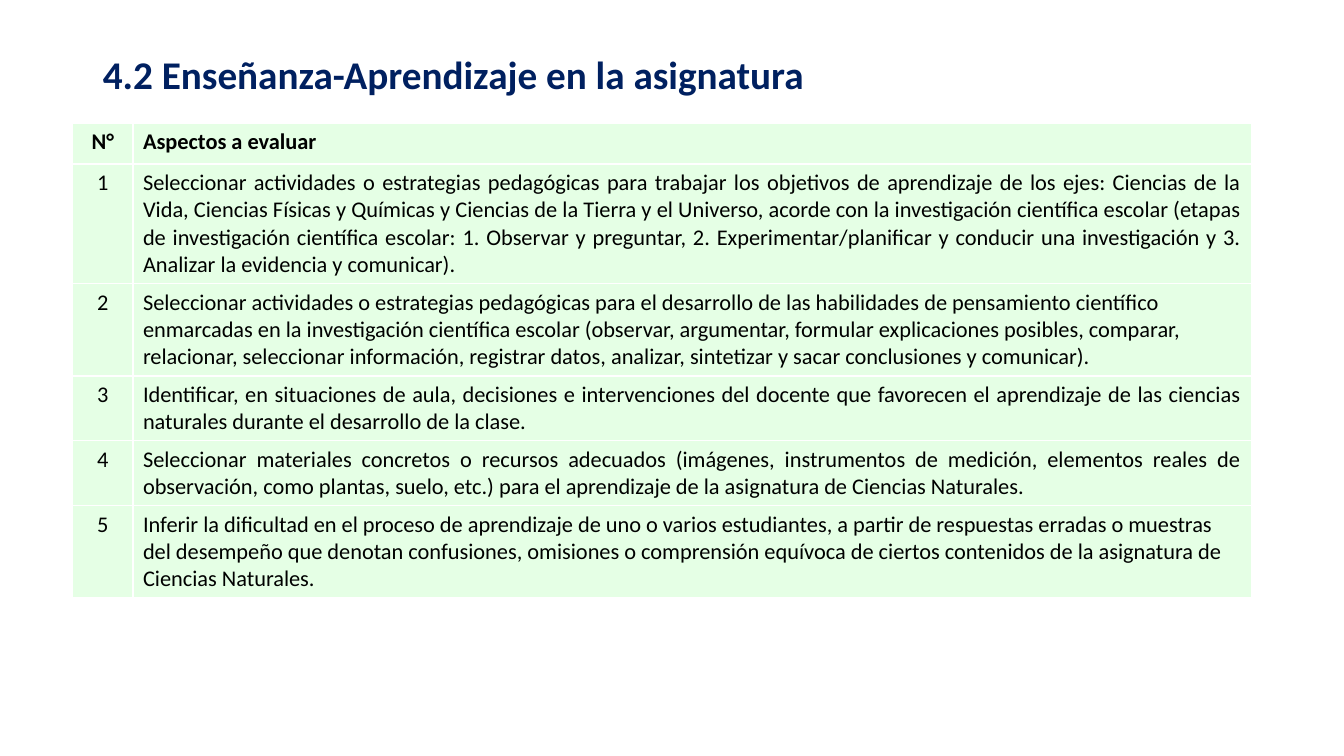
from pptx import Presentation
from pptx.dml.color import RGBColor
from pptx.enum.text import MSO_ANCHOR, PP_ALIGN
from pptx.util import Pt

COLORS = {"heading": "002060", "text": "000000", "cell": "E5FFE5"}
FONT = "Calibri"
LINE_HEIGHT, CELL_PADDING = 19.53, 7.2

# Each aspect: wording, alignment, number of lines
ASPECTS = [
    ("Seleccionar actividades o estrategias pedagógicas para trabajar los objetivos de "
     "aprendizaje de los ejes: Ciencias de la Vida, Ciencias Físicas y Químicas y Ciencias "
     "de la Tierra y el Universo, acorde con la investigación científica escolar (etapas de "
     "investigación científica escolar: 1. Observar y preguntar, 2. Experimentar/planificar "
     "y conducir una investigación y 3. Analizar la evidencia y comunicar).",
     PP_ALIGN.JUSTIFY, 4),
    ("Seleccionar actividades o estrategias pedagógicas para el desarrollo de las "
     "habilidades de pensamiento científico enmarcadas en la investigación científica "
     "escolar (observar, argumentar, formular explicaciones posibles, comparar, relacionar, "
     "seleccionar información, registrar datos, analizar, sintetizar y sacar conclusiones y "
     "comunicar).",
     PP_ALIGN.LEFT, 3),
    ("Identificar, en situaciones de aula, decisiones e intervenciones del docente que "
     "favorecen el aprendizaje de las ciencias naturales durante el desarrollo de la clase.",
     PP_ALIGN.JUSTIFY, 2),
    ("Seleccionar materiales concretos o recursos adecuados (imágenes, instrumentos de "
     "medición, elementos reales de observación, como plantas, suelo, etc.) para el "
     "aprendizaje de la asignatura de Ciencias Naturales.",
     PP_ALIGN.JUSTIFY, 2),
    ("Inferir la dificultad en el proceso de aprendizaje de uno o varios estudiantes, a "
     "partir de respuestas erradas o muestras del desempeño que denotan confusiones, "
     "omisiones o comprensión equívoca de ciertos contenidos de la asignatura de Ciencias "
     "Naturales.",
     PP_ALIGN.LEFT, 3),
]


class SlideBuilder:
    def __init__(self, slide):
        self.slide = slide

    def add_text(self, frame, text, size, color, bold, align):
        paragraph = frame.paragraphs[0]
        paragraph.alignment = align
        run = paragraph.add_run()
        run.text = text
        run.font.name = FONT
        run.font.size = Pt(size)
        run.font.bold = bold
        run.font.color.rgb = RGBColor.from_string(COLORS[color])
        return paragraph

    def title(self, text, left, top, width, height):
        heading = self.slide.shapes.title
        heading.left, heading.top = Pt(left), Pt(top)
        heading.width, heading.height = Pt(width), Pt(height)
        frame = heading.text_frame
        frame.vertical_anchor = MSO_ANCHOR.MIDDLE
        self.add_text(frame, text, 28, "heading", True, PP_ALIGN.LEFT).line_spacing = 0.9

    def table(self, rows, left, top, widths, heights):
        grid = self.slide.shapes.add_table(
            len(rows), len(widths), Pt(left), Pt(top),
            Pt(sum(widths)), Pt(sum(heights))).table
        grid.horz_banding = False
        for column, width in zip(grid.columns, widths):
            column.width = Pt(width)
        for r, (row, height) in enumerate(zip(rows, heights)):
            grid.rows[r].height = Pt(height)
            for c, (text, align) in enumerate(row):
                cell = grid.cell(r, c)
                cell.fill.solid()
                cell.fill.fore_color.rgb = RGBColor.from_string(COLORS["cell"])
                self.add_text(cell.text_frame, text, 16, "text", r == 0, align)


def main():
    presentation = Presentation()
    presentation.slide_width, presentation.slide_height = Pt(960), Pt(540)
    builder = SlideBuilder(presentation.slides.add_slide(presentation.slide_layouts[5]))

    # Heading
    builder.title("4.2 Enseñanza-Aprendizaje en la asignatura", 66.24, 36, 828, 38)

    # Numbered aspects under a header row
    rows = [[("N°", PP_ALIGN.CENTER), ("Aspectos a evaluar", PP_ALIGN.LEFT)]]
    heights = [29.2]
    for number, (aspect, align, lines) in enumerate(ASPECTS, 1):
        rows.append([(str(number), PP_ALIGN.CENTER), (aspect, align)])
        heights.append(lines * LINE_HEIGHT + CELL_PADDING)
    builder.table(rows, 52, 88, [43, 799], heights)

    presentation.save("out.pptx")


if __name__ == "__main__":
    main()
